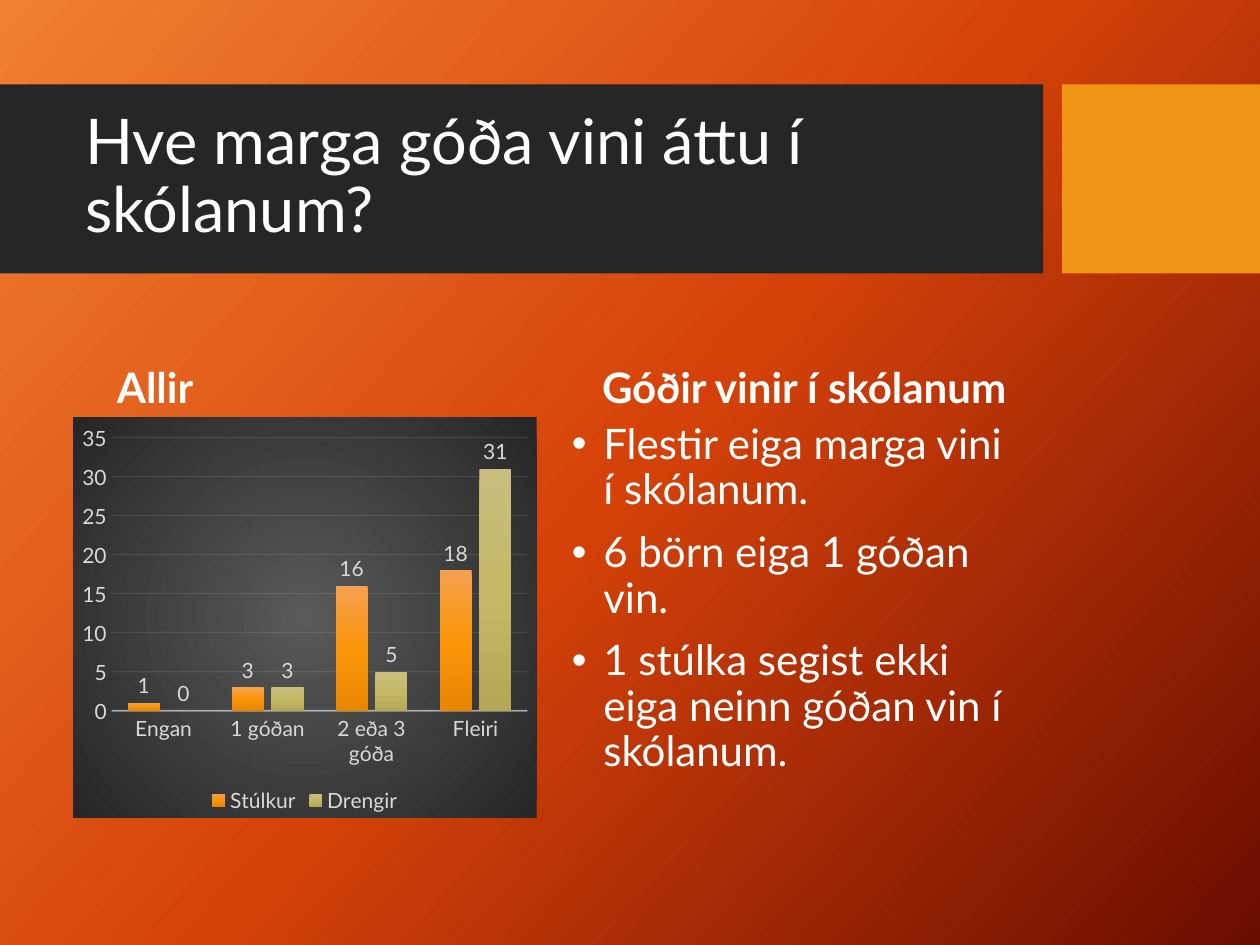
from dataclasses import dataclass

from lxml.etree import SubElement
from pptx import Presentation
from pptx.chart.data import CategoryChartData
from pptx.dml.color import RGBColor
from pptx.enum.chart import XL_CHART_TYPE, XL_LABEL_POSITION, XL_LEGEND_POSITION, XL_TICK_MARK
from pptx.enum.shapes import MSO_SHAPE
from pptx.enum.text import MSO_ANCHOR
from pptx.oxml import parse_xml
from pptx.oxml.ns import nsdecls, qn
from pptx.util import Inches, Pt

WHITE, PALE, GRID = "FFFFFF", "D9D9D9", "F2F2F2"
CHART_FONT = {"name": "Lato", "size": Pt(12), "bold": False}


@dataclass
class Band:
    left: float
    width: float
    color: str


@dataclass
class TextBlock:
    box: tuple[float, float, float, float]
    paragraphs: list[str]
    size: int = 24
    bold: bool = False
    anchor: MSO_ANCHOR = MSO_ANCHOR.TOP
    line_spacing: float = 0.9
    bulleted: bool = False


@dataclass
class Answers:
    group: str
    counts: list[int]
    stops: list[tuple[int, str]]


BANDS = [Band(0, 8.28, "262626"), Band(8.43, 1.57, "F09415")]
TEXTS = [
    TextBlock((0.58, 0.82, 7.54, 1.18), ["Hve marga góða vini áttu í skólanum?"],
              size=36, anchor=MSO_ANCHOR.MIDDLE),
    TextBlock((0.83, 2.56, 3.44, 0.76), ["Allir"], bold=True, anchor=MSO_ANCHOR.BOTTOM),
    TextBlock((4.68, 2.56, 3.44, 0.76), ["Góðir vinir í skólanum"], bold=True,
              anchor=MSO_ANCHOR.BOTTOM, line_spacing=0.8),
    TextBlock((4.44, 3.31, 3.68, 3.18),
              ["Flestir eiga marga vini í skólanum.",
               "6 börn eiga 1 góðan vin.",
               "1 stúlka segist ekki eiga neinn góðan vin í skólanum."], bulleted=True),
]
CHART_BOX = (0.58, 3.31, 3.68, 3.18)
CATEGORIES = ["Engan", "1 góðan", "2 eða 3 góða", "Fleiri"]
ANSWERS = [
    Answers("Stúlkur", [1, 3, 16, 18], [(0, "F4A050"), (50, "FB960A"), (100, "E88600")]),
    Answers("Drengir", [0, 3, 5, 31], [(0, "C8BE7F"), (50, "C5B867"), (100, "B4A756")]),
]


def rgb(color: str) -> RGBColor:
    return RGBColor.from_string(color)


def apply_font(font, color: str, values: dict) -> None:
    for attribute, value in values.items():
        setattr(font, attribute, value)
    font.color.rgb = rgb(color)


def gradient(stops: list[tuple[int, str]], angle: int | None = None):
    """Linear at the given clockwise angle, or circular from the centre."""
    marks = "".join(f'<a:gs pos="{place * 1000}"><a:srgbClr val="{color}"/></a:gs>'
                    for place, color in stops)
    if angle is None:
        course = ('<a:path path="circle"><a:fillToRect l="50000" t="50000" '
                  'r="50000" b="50000"/></a:path>')
    else:
        course = f'<a:lin ang="{angle * 60000}" scaled="0"/>'
    return parse_xml(f'<a:gradFill {nsdecls("a")} rotWithShape="1">'
                     f'<a:gsLst>{marks}</a:gsLst>{course}</a:gradFill>')


def fill_gradient(fill, owner, stops: list[tuple[int, str]], angle: int) -> None:
    fill.gradient()
    default = owner.find(".//" + qn("a:gradFill"))
    default.getparent().replace(default, gradient(stops, angle))


def style_line(line, owner, width: float, opacity: int) -> None:
    line.color.rgb = rgb(GRID)
    line.width = Pt(width)
    color = owner.find(f"{qn('c:spPr')}/{qn('a:ln')}//{qn('a:srgbClr')}")
    SubElement(color, qn("a:alpha")).set("val", str(opacity * 1000))


def add_band(slide, band: Band) -> None:
    bar = slide.shapes.add_shape(MSO_SHAPE.RECTANGLE, Inches(band.left), Inches(0.67),
                                 Inches(band.width), Inches(1.5))
    bar.shadow.inherit = False
    bar.fill.solid()
    bar.fill.fore_color.rgb = rgb(band.color)
    bar.line.fill.background()


def add_text(slide, block: TextBlock) -> None:
    frame = slide.shapes.add_textbox(*map(Inches, block.box)).text_frame
    frame.word_wrap = True
    frame.vertical_anchor = block.anchor
    for index, words in enumerate(block.paragraphs):
        paragraph = frame.add_paragraph() if index else frame.paragraphs[0]
        paragraph.text = words
        paragraph.line_spacing = block.line_spacing
        paragraph.space_before = Pt(10 if index else 0)
        if block.bulleted:
            properties = paragraph._p.get_or_add_pPr()
            properties.set("marL", str(Inches(0.25)))
            properties.set("indent", str(Inches(-0.25)))
            SubElement(properties, qn("a:buFont")).set("typeface", "Arial")
            SubElement(properties, qn("a:buChar")).set("char", "•")
        apply_font(paragraph.font, WHITE,
                   {"name": "Lato", "size": Pt(block.size), "bold": block.bold})


def add_friends_chart(slide) -> None:
    data = CategoryChartData()
    data.categories = CATEGORIES
    for answers in ANSWERS:
        data.add_series(answers.group, answers.counts)
    chart = slide.shapes.add_chart(XL_CHART_TYPE.COLUMN_CLUSTERED,
                                   *map(Inches, CHART_BOX), data).chart
    chart.has_title = False
    apply_font(chart.font, WHITE, CHART_FONT | {"size": Pt(10)})

    # Chart area
    area = parse_xml(f'<c:spPr {nsdecls("c", "a")}><a:ln><a:noFill/></a:ln></c:spPr>')
    area.insert(0, gradient([(0, "595959"), (100, "262626")]))
    chart._chartSpace.find(qn("c:txPr")).addprevious(area)

    # Legend
    chart.has_legend = True
    chart.legend.position = XL_LEGEND_POSITION.BOTTOM
    chart.legend.include_in_layout = False
    apply_font(chart.legend.font, PALE, CHART_FONT)

    # Axes
    counts, choices = chart.value_axis, chart.category_axis
    for axis in (counts, choices):
        axis.major_tick_mark = axis.minor_tick_mark = XL_TICK_MARK.NONE
        apply_font(axis.tick_labels.font, PALE, CHART_FONT)
    scale = {"minimum_scale": 0, "maximum_scale": 35, "major_unit": 5}
    for attribute, value in scale.items():
        setattr(counts, attribute, value)
    counts.format.line.fill.background()
    gridlines = counts.major_gridlines
    style_line(gridlines.format.line, counts._element.find(qn("c:majorGridlines")), 0.75, 10)
    style_line(choices.format.line, choices._element, 1, 54)

    # Columns
    plot = chart.plots[0]
    plot.gap_width, plot.overlap, plot.vary_by_categories = 100, -24, False
    for series, answers in zip(plot.series, ANSWERS):
        fill_gradient(series.format.fill, series._element, answers.stops, 90)
        labels = series.data_labels
        labels.show_value = True
        labels.position = XL_LABEL_POSITION.OUTSIDE_END
        apply_font(labels.font, PALE, CHART_FONT)


def main() -> None:
    presentation = Presentation()
    presentation.slide_width, presentation.slide_height = Inches(10), Inches(7.5)
    slide = presentation.slides.add_slide(presentation.slide_layouts[6])
    fill_gradient(slide.background.fill, slide._element,
                  [(0, "F18031"), (50, "D54209"), (100, "6A0D00")], 42)
    for band in BANDS:
        add_band(slide, band)
    for block in TEXTS:
        add_text(slide, block)
    add_friends_chart(slide)
    presentation.save("out.pptx")


if __name__ == "__main__":
    main()
